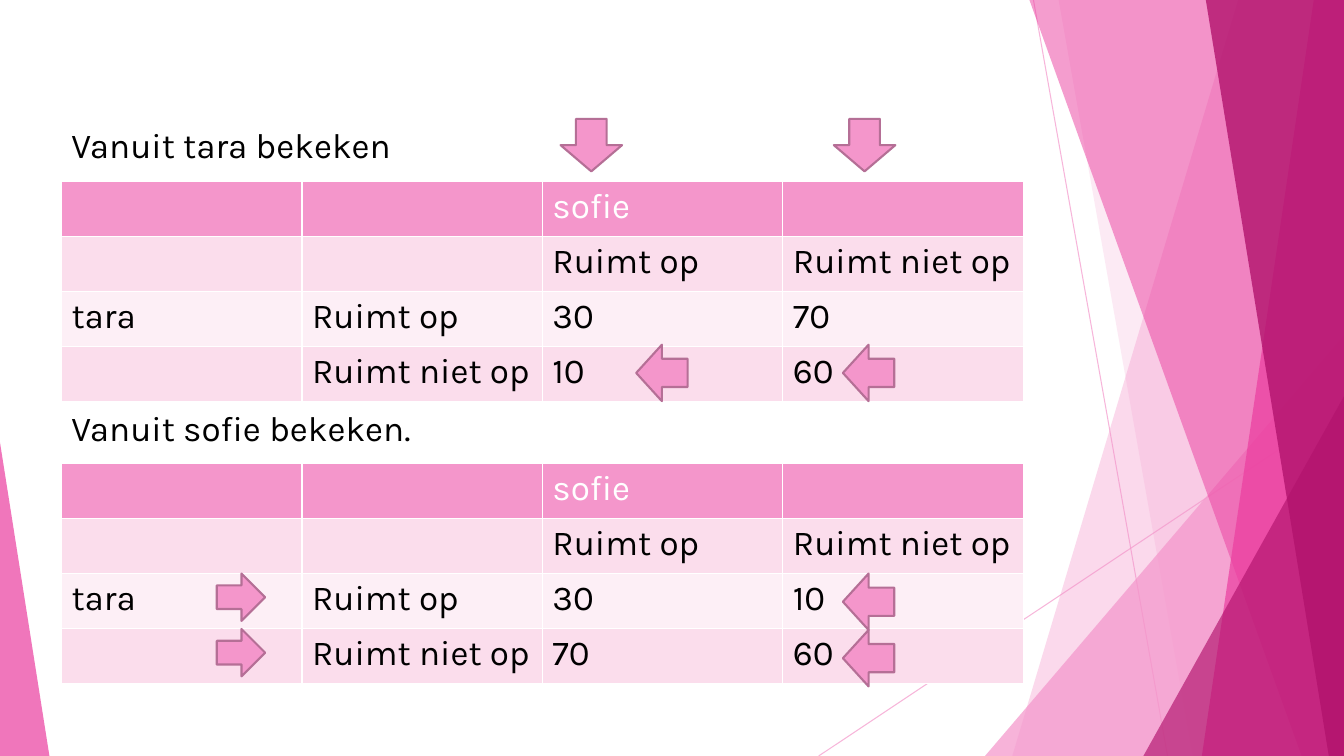
from lxml import etree
from pptx import Presentation
from pptx.dml.color import RGBColor
from pptx.enum.shapes import MSO_CONNECTOR, MSO_SHAPE
from pptx.oxml.ns import qn
from pptx.util import Inches, Pt

STRAIGHT = MSO_CONNECTOR.STRAIGHT
TRIANGLE = MSO_SHAPE.ISOSCELES_TRIANGLE
DOWN = MSO_SHAPE.DOWN_ARROW
LEFT = MSO_SHAPE.LEFT_ARROW
RIGHT = MSO_SHAPE.RIGHT_ARROW

WIDTH, HEIGHT = 13.33, 7.5
FONT, TEXT_SIZE = "Karla", 25
PINK, HOT_PINK, MAGENTA = "F496CB", "EB3D9F", "B2136D"
LIGHT_ROW, PALE_ROW = "FBDDEC", "FDEFF6"
ARROW_LINE, WHITE, BLACK = "B56F96", "FFFFFF", "000000"
ARROW_SIZES = {DOWN: (0.61, 0.52), LEFT: (0.51, 0.56), RIGHT: (0.48, 0.47)}

TABLE_LEFT, TABLE_WIDTH, TABLE_HEIGHT = 0.61, 9.54, 2.18
LABEL_RISE = 0.62


def paint(color_format, color):
    color_format.rgb = RGBColor.from_string(color)


def fill_solid(fill, color, opacity=100):
    fill.solid()
    paint(fill.fore_color, color)
    if opacity < 100:
        set_opacity(fill.fore_color, fill, opacity)


def set_opacity(color_format, owner, opacity):
    """Add an alpha value to the solid fill that belongs to a fill format."""
    paint(color_format, str(color_format.rgb))
    color = owner._xPr.find(qn("a:solidFill")).find(qn("a:srgbClr"))
    etree.SubElement(color, qn("a:alpha")).set("val", str(opacity * 1000))


def add_text(text_frame, text, color):
    run = text_frame.paragraphs[0].add_run()
    run.text = text
    run.font.name = FONT
    run.font.size = Pt(TEXT_SIZE)
    run.font.bold = False
    paint(run.font.color, color)


def add_thin_line(slide, start_x, start_y, end_x, end_y):
    line = slide.shapes.add_connector(
        STRAIGHT, Inches(start_x), Inches(start_y), Inches(end_x), Inches(end_y))
    line.line.width = Pt(0.75)
    fill_solid(line.line.fill, PINK, 70)
    etree.SubElement(line._element.spPr, qn("a:effectLst"))


def finish_facet(shape, color, opacity):
    shape.shadow.inherit = False
    fill_solid(shape.fill, color, opacity)
    shape.line.fill.background()


def add_band(slide, top_x, bottom_x, color, opacity):
    """Fill the area from a slanted edge to the right side of the slide."""
    builder = slide.shapes.build_freeform(Inches(top_x), 0)
    corners = [(WIDTH, 0), (WIDTH, HEIGHT), (bottom_x, HEIGHT)]
    builder.add_line_segments([(Inches(x), Inches(y)) for x, y in corners])
    finish_facet(builder.convert_to_shape(), color, opacity)


def add_corner(slide, left, top, width, apex, color, opacity):
    """Add a triangle that stands on the bottom edge of the slide."""
    shape = slide.shapes.add_shape(
        TRIANGLE, Inches(left), Inches(top), Inches(width), Inches(HEIGHT - top))
    shape.adjustments[0] = apex
    finish_facet(shape, color, opacity)


def add_facets(slide):
    add_thin_line(slide, 10.25, 0, 11.58, HEIGHT)
    add_thin_line(slide, WIDTH, 4.03, 8.12, HEIGHT)
    add_band(slide, 12.28, 10.04, PINK, 36)
    add_band(slide, 10.5, 11.83, PINK, 20)
    add_corner(slide, 9.77, 3.33, 3.56, 1, PINK, 72)
    add_band(slide, 10.21, 12.91, HOT_PINK, 50)
    add_band(slide, 13.03, 11.92, HOT_PINK, 70)
    add_band(slide, 11.96, 13.18, MAGENTA, 80)
    add_corner(slide, 11.34, 3.93, 1.99, 1, MAGENTA, 66)
    add_corner(slide, 0, 4.39, 0.49, 0, HOT_PINK, 70)


def add_label(slide, left, top, width, text):
    box = slide.shapes.add_textbox(
        Inches(left), Inches(top), Inches(width), Inches(0.52))
    box.text_frame.word_wrap = True
    add_text(box.text_frame, text, BLACK)


def add_payoff_table(slide, left, top, width, height, payoffs):
    (both, only_tara), (only_sofie, neither) = payoffs
    rows = [
        ["", "", "sofie", ""],
        ["", "", "Ruimt op", "Ruimt niet op"],
        ["tara", "Ruimt op", both, only_tara],
        ["", "Ruimt niet op", only_sofie, neither],
    ]
    fills = [PINK, LIGHT_ROW, PALE_ROW, LIGHT_ROW]
    table = slide.shapes.add_table(
        len(rows), len(rows[0]), Inches(left), Inches(top),
        Inches(width), Inches(height)).table
    for row_index, (row, fill) in enumerate(zip(rows, fills)):
        for column_index, text in enumerate(row):
            cell = table.cell(row_index, column_index)
            fill_solid(cell.fill, fill)
            if text:
                add_text(cell.text_frame, text, BLACK if row_index else WHITE)


def add_arrow(slide, kind, left, top):
    width, height = ARROW_SIZES[kind]
    arrow = slide.shapes.add_shape(
        kind, Inches(left), Inches(top), Inches(width), Inches(height))
    arrow.shadow.inherit = False
    fill_solid(arrow.fill, PINK)
    fill_solid(arrow.line.fill, ARROW_LINE)
    arrow.line.width = Pt(1.5)


def add_viewpoint(slide, left, top, label, label_width, payoffs, arrows):
    """Place a labelled table; arrow offsets count from the table's corner."""
    add_payoff_table(slide, left, top, TABLE_WIDTH, TABLE_HEIGHT, payoffs)
    add_label(slide, left, top - LABEL_RISE, label_width, label)
    for kind, offset_x, offset_y in arrows:
        add_arrow(slide, kind, left + offset_x, top + offset_y)


def main():
    presentation = Presentation()
    presentation.slide_width = Inches(WIDTH)
    presentation.slide_height = Inches(HEIGHT)
    slide = presentation.slides.add_slide(presentation.slide_layouts[6])
    add_facets(slide)
    add_viewpoint(
        slide, TABLE_LEFT, 1.8, "Vanuit tara bekeken", 3.86,
        [("30", "70"), ("10", "60")],
        [(DOWN, 4.95, -LABEL_RISE), (DOWN, 7.66, -LABEL_RISE),
         (LEFT, 5.7, 1.62), (LEFT, 7.75, 1.62)])
    add_viewpoint(
        slide, TABLE_LEFT, 4.6, "Vanuit sofie bekeken.", 7.14,
        [("30", "10"), ("70", "60")],
        [(LEFT, 7.75, 1.09), (LEFT, 7.75, 1.65),
         (RIGHT, 1.54, 1.09), (RIGHT, 1.54, 1.64)])
    presentation.save("out.pptx")


if __name__ == "__main__":
    main()
